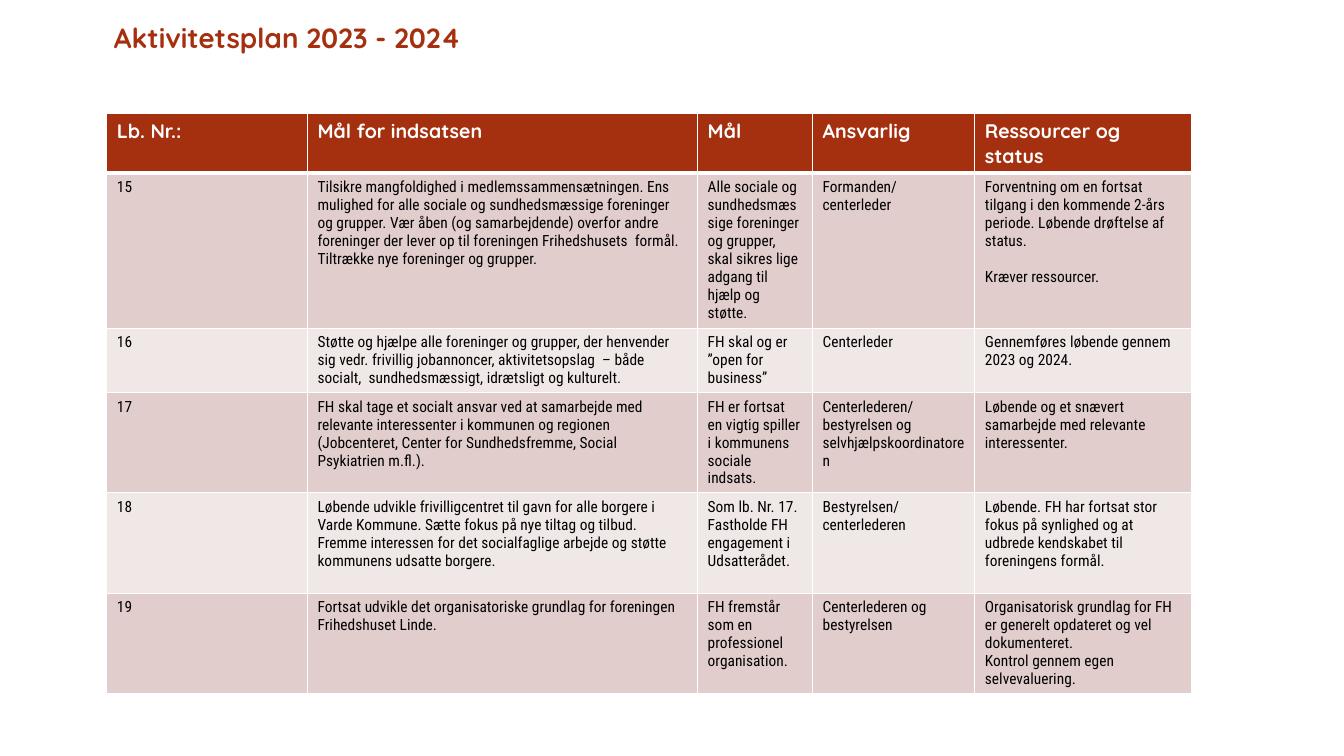
from lxml import etree
from pptx import Presentation
from pptx import util as u
from pptx.dml.color import RGBColor
from pptx.enum import text
from pptx.oxml.ns import qn

COLORS = {"rust": "A53010", "rose": "E1CDCC", "pale": "F0E8E7",
          "white": "FFFFFF", "black": "000000"}
HEAD_FONT, BODY_FONT = "Quicksand", "Roboto Condensed"

COL_WIDTHS = [1.99, 3.87, 1.14, 1.61, 2.15]
ROW_HEIGHTS = [0.57, 1.54, 0.64, 0.99, 1.0, 0.99]
HEADER = ["Lb. Nr.:", "Mål for indsatsen", "Mål", "Ansvarlig", "Ressourcer og status"]
ACTIVITIES = [
    ["15",
     "Tilsikre mangfoldighed i medlemssammensætningen. Ens mulighed for alle sociale og "
     "sundhedsmæssige foreninger og grupper. Vær åben (og samarbejdende) overfor andre "
     "foreninger der lever op til foreningen Frihedshusets  formål.\n"
     "Tiltrække nye foreninger og grupper.",
     "Alle sociale og sundhedsmæssige foreninger og grupper, skal sikres lige adgang til "
     "hjælp og støtte.",
     "Formanden/centerleder",
     "Forventning om en fortsat tilgang i den kommende 2-års periode. Løbende drøftelse "
     "af status.\nKræver ressourcer."],
    ["16",
     "Støtte og hjælpe alle foreninger og grupper, der henvender sig vedr. frivillig "
     "jobannoncer, aktivitetsopslag  – både socialt,  sundhedsmæssigt, idrætsligt og "
     "kulturelt.",
     "FH skal og er ”open for business”",
     "Centerleder",
     "Gennemføres løbende gennem 2023 og 2024."],
    ["17",
     "FH skal tage et socialt ansvar ved at samarbejde med relevante interessenter i "
     "kommunen og regionen (Jobcenteret, Center for Sundhedsfremme, Social Psykiatrien "
     "m.fl.).",
     "FH er fortsat en vigtig spiller i kommunens sociale indsats.",
     "Centerlederen/bestyrelsen og selvhjælpskoordinatoren",
     "Løbende og et snævert samarbejde med relevante interessenter."],
    ["18",
     "Løbende udvikle frivilligcentret til gavn for alle borgere i Varde Kommune. Sætte "
     "fokus på nye tiltag og tilbud.\nFremme interessen for det socialfaglige arbejde og "
     "støtte kommunens udsatte borgere.",
     "Som lb. Nr. 17.\nFastholde FH engagement i Udsatterådet.",
     "Bestyrelsen/centerlederen",
     "Løbende. FH har fortsat stor fokus på synlighed og at udbrede kendskabet til "
     "foreningens formål."],
    ["19",
     "Fortsat udvikle det organisatoriske grundlag for foreningen Frihedshuset Linde.",
     "FH fremstår som en professionel organisation.",
     "Centerlederen og bestyrelsen",
     "Organisatorisk grundlag for FH er generelt opdateret og vel dokumenteret.\n"
     "Kontrol gennem egen selvevaluering."],
]


class PlanSlide:
    def __init__(self, prs):
        self.s = prs.slides.add_slide(prs.slide_layouts[5])

    def style(self, tf, font, size, color, bold):
        for p in tf.paragraphs:
            p.alignment = text.PP_ALIGN.LEFT
            for r in p.runs:
                r.font.name, r.font.size, r.font.bold = font, u.Pt(size), bold
                r.font.color.rgb = RGBColor.from_string(COLORS[color])

    def title(self, wording, left, top, width, height):
        sp = self.s.shapes.title
        sp.left, sp.top, sp.width, sp.height = map(u.Inches, (left, top, width, height))
        tf = sp.text_frame
        tf.text = wording
        tf.word_wrap = True
        tf.auto_size = text.MSO_AUTO_SIZE.NONE
        tf.vertical_anchor = text.MSO_ANCHOR.TOP
        tf.margin_top = 0
        self.style(tf, HEAD_FONT, 19.8, "rust", True)

    def borders(self, cell, bottom, top):
        """White cell edges; bottom and top are line widths in points."""
        tc_pr = cell._tc.get_or_add_tcPr()
        for edge, width in (("L", 1), ("R", 1), ("T", top), ("B", bottom)):
            ln = etree.SubElement(tc_pr, qn(f"a:ln{edge}"), w=str(u.Pt(width)))
            fill = etree.SubElement(ln, qn("a:solidFill"))
            etree.SubElement(fill, qn("a:srgbClr"), val=COLORS["white"])

    def table(self, rows, left, top):
        tbl = self.s.shapes.add_table(
            len(rows), len(COL_WIDTHS), u.Inches(left), u.Inches(top),
            u.Inches(sum(COL_WIDTHS)), u.Inches(sum(ROW_HEIGHTS))).table
        for col, width in zip(tbl.columns, COL_WIDTHS):
            col.width = u.Inches(width)
        for i, (row, height) in enumerate(zip(rows, ROW_HEIGHTS)):
            tbl.rows[i].height = u.Inches(height)
            band = "rust" if i == 0 else ("rose" if i % 2 else "pale")
            for j, wording in enumerate(row):
                cell = tbl.cell(i, j)
                cell.text_frame.text = wording
                if i == 0:
                    self.style(cell.text_frame, HEAD_FONT, 14, "white", True)
                else:
                    self.style(cell.text_frame, BODY_FONT, 11, "black", False)
                self.borders(cell, 3 if i == 0 else 1, 3 if i == 1 else 1)
                cell.fill.solid()
                cell.fill.fore_color.rgb = RGBColor.from_string(COLORS[band])
        return tbl


def main():
    prs = Presentation()
    prs.slide_width, prs.slide_height = u.Inches(13.33), u.Inches(7.5)
    plan = PlanSlide(prs)
    plan.title("Aktivitetsplan 2023 - 2024", 1.03, 0.21, 9.75, 0.85)
    tbl = plan.table([HEADER] + ACTIVITIES, 1.06, 1.13)
    resources = tbl.cell(1, 4).text_frame
    resources.paragraphs[1].space_before = u.Pt(12.9)
    prs.save("out.pptx")


if __name__ == "__main__":
    main()
